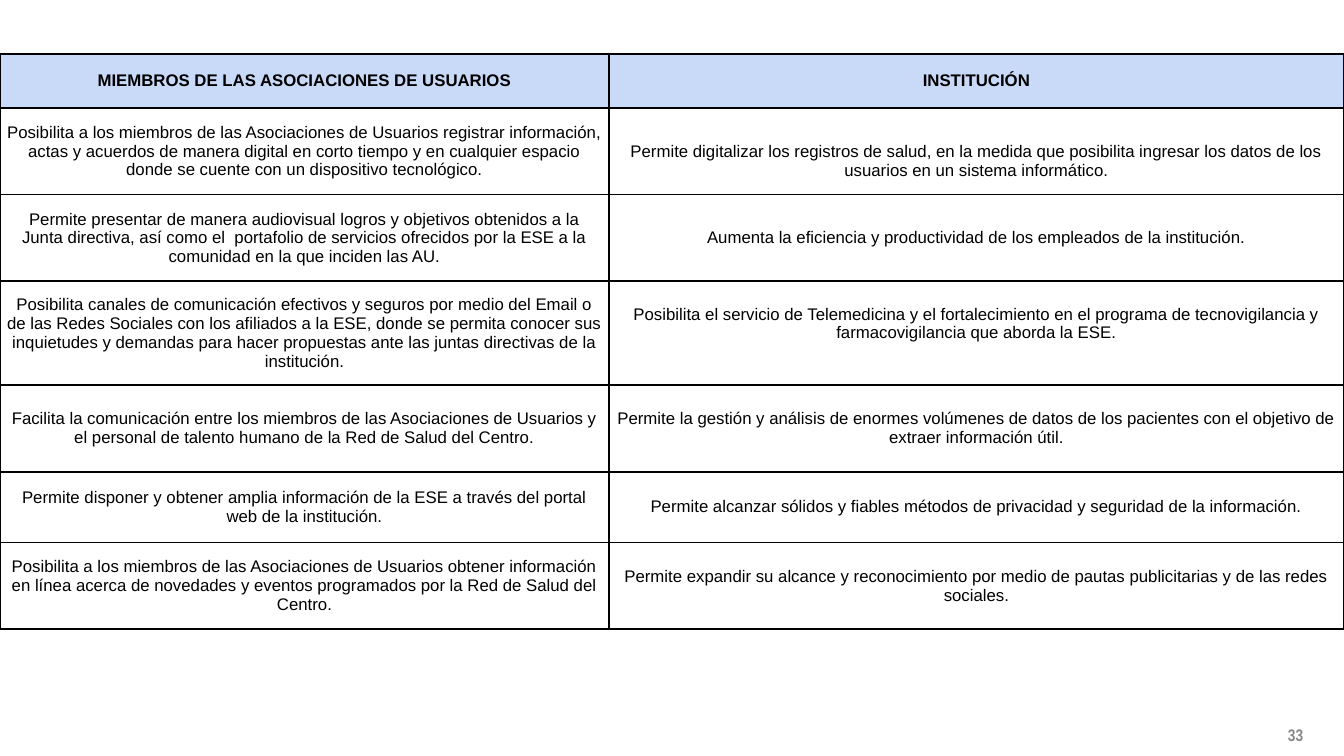
from lxml import etree
from pptx import Presentation
from pptx.dml.color import RGBColor
from pptx.enum.text import MSO_ANCHOR, PP_ALIGN
from pptx.oxml.ns import qn
from pptx.util import Pt

COLORS = {"text": "000000", "border": "000000", "header": "C9DAF8", "number": "888888"}
LINE = 13.6  # height of one text line
ROWS = [
    (38.5, "MIEMBROS DE LAS ASOCIACIONES DE USUARIOS", "INSTITUCIÓN"),
    (62, "Posibilita a los miembros de las Asociaciones de Usuarios registrar información, actas y "
         "acuerdos de manera digital en corto tiempo y en cualquier espacio donde se cuente con un "
         "dispositivo tecnológico.",
     "Permite digitalizar los registros de salud, en la medida que posibilita ingresar los datos "
     "de los usuarios en un sistema informático."),
    (62, "Permite presentar de manera audiovisual logros y objetivos obtenidos a la Junta directiva, "
         "así como el  portafolio de servicios ofrecidos por la ESE a la comunidad en la que "
         "inciden las AU.",
     "Aumenta la eficiencia y productividad de los empleados de la institución."),
    (74, "Posibilita canales de comunicación efectivos y seguros por medio del Email o de las Redes "
         "Sociales con los afiliados a la ESE, donde se permita conocer sus inquietudes y demandas "
         "para hacer propuestas ante las juntas directivas de la institución.",
     "Posibilita el servicio de Telemedicina y el fortalecimiento en el programa de "
     "tecnovigilancia y farmacovigilancia que aborda la ESE."),
    (62, "Facilita la comunicación entre los miembros de las Asociaciones de Usuarios y el personal "
         "de talento humano de la Red de Salud del Centro.",
     "Permite la gestión y análisis de enormes volúmenes de datos de los pacientes con el "
     "objetivo de extraer información útil."),
    (50.5, "Permite disponer y obtener amplia información de la ESE a través del portal web de la "
           "institución.",
     "Permite alcanzar sólidos y fiables métodos de privacidad y seguridad de la información."),
    (62, "Posibilita a los miembros de las Asociaciones de Usuarios obtener información en línea "
         "acerca de novedades y eventos programados por la Red de Salud del Centro.",
     "Permite expandir su alcance y reconocimiento por medio de pautas publicitarias y de las "
     "redes sociales."),
]


def add_text(tf, text, font, color, bold):
    p = tf.paragraphs[0]
    p.alignment = PP_ALIGN.CENTER
    r = p.add_run()
    r.text = text
    r.font.name, r.font.size, r.font.bold = font, Pt(12), bold
    r.font.color.rgb = RGBColor.from_string(COLORS[color])


def add_borders(cell):
    tcPr = cell._tc.get_or_add_tcPr()
    for side in ("a:lnL", "a:lnR", "a:lnT", "a:lnB"):
        ln = etree.SubElement(tcPr, qn(side), w=str(Pt(1.5)))
        fill = etree.SubElement(ln, qn("a:solidFill"))
        etree.SubElement(fill, qn("a:srgbClr"), val=COLORS["border"])


prs = Presentation()
prs.slide_width, prs.slide_height = Pt(960), Pt(540)
s = prs.slides.add_slide(prs.slide_layouts[6])

# Slide number
box = s.shapes.add_textbox(Pt(898), Pt(510), Pt(55), Pt(29))
tf = box.text_frame
tf.word_wrap = True
tf.vertical_anchor = MSO_ANCHOR.MIDDLE
add_text(tf, "33", "Arial Narrow", "number", True)

# Benefits for members and for the institution
height = sum(row[0] for row in ROWS)
table = s.shapes.add_table(len(ROWS), 2, 0, Pt(38.5), Pt(960), Pt(height)).table
table.horz_banding = table.first_row = False
table.columns[0].width, table.columns[1].width = Pt(435), Pt(525)
for i, (row_height, *texts) in enumerate(ROWS):
    table.rows[i].height = Pt(row_height)
    for j, text in enumerate(texts):
        cell = table.cell(i, j)
        cell.margin_left = cell.margin_right = cell.margin_top = cell.margin_bottom = Pt(5)
        cell.vertical_anchor = MSO_ANCHOR.MIDDLE
        add_text(cell.text_frame, text, "Arial", "text", i == 0)
        add_borders(cell)
        if i == 0:
            cell.fill.solid()
            cell.fill.fore_color.rgb = RGBColor.from_string(COLORS["header"])
        else:
            cell.fill.background()

# Two cells sit half a line off centre
table.cell(1, 1).margin_top = Pt(5 + LINE)
table.cell(3, 1).margin_bottom = Pt(5 + LINE)

prs.save("out.pptx")
